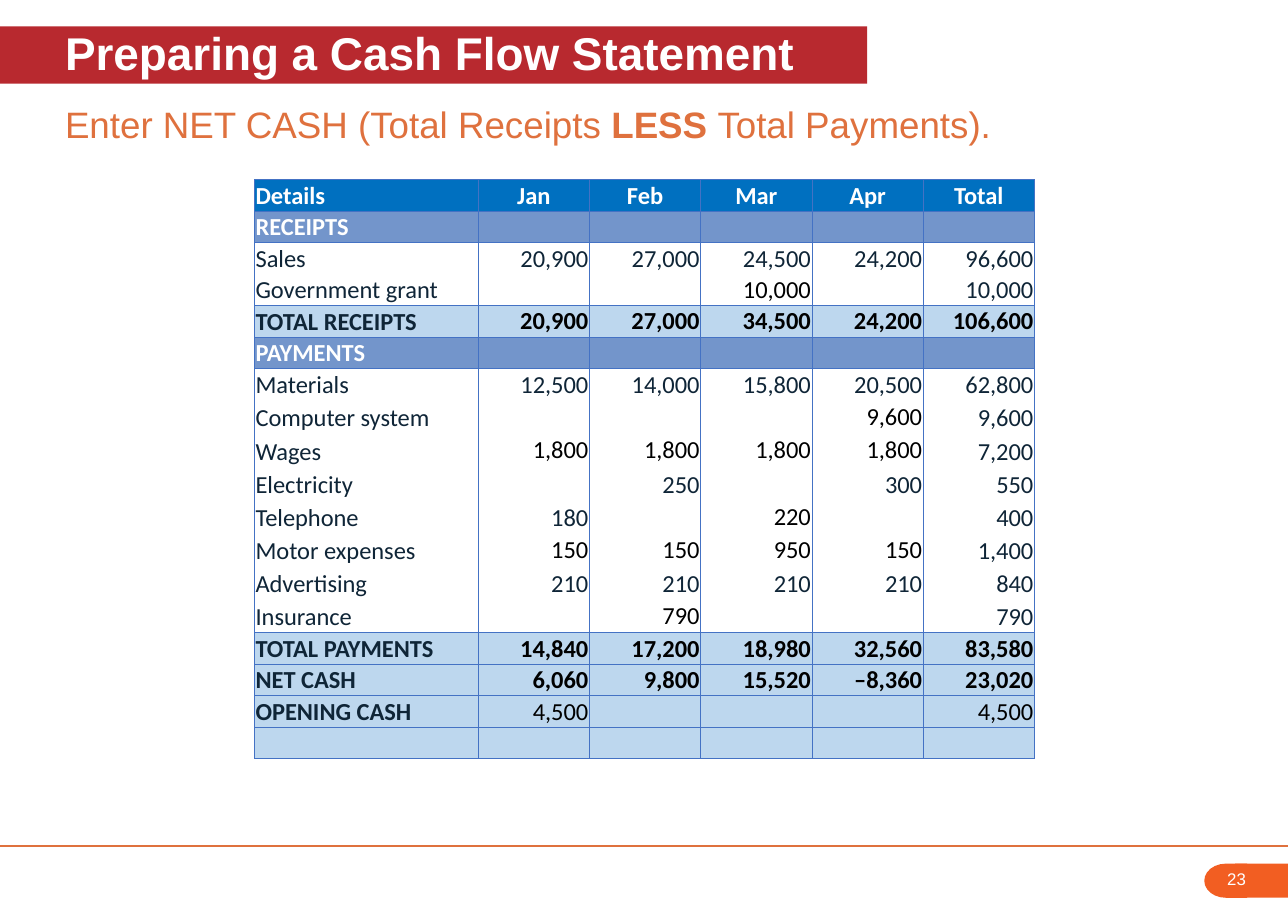
"""Build the cash flow statement slide with its net cash table."""
from lxml.etree import SubElement
from pptx import Presentation
from pptx.dml.color import RGBColor
from pptx.enum.shapes import MSO_CONNECTOR, MSO_SHAPE
from pptx.enum.text import MSO_ANCHOR as ANCHOR, MSO_AUTO_SIZE, PP_ALIGN as ALIGN
from pptx.oxml.ns import qn
from pptx.util import Inches, Pt

TITLE = "Preparing a Cash Flow Statement"
PROMPT = [("Enter NET CASH (Total Receipts ", False), ("LESS ", True),
          ("Total Payments).", False)]
PAGE = "23"

ROWS = [
    ("header", "Details", "Jan", "Feb", "Mar", "Apr", "Total"),
    ("section", "RECEIPTS", "", "", "", "", ""),
    ("receipt", "Sales", "20,900", "27,000", "24,500", "24,200", "96,600"),
    ("receipt", "Government grant", "", "", "10,000", "", "10,000"),
    ("total", "TOTAL RECEIPTS", "20,900", "27,000", "34,500", "24,200", "106,600"),
    ("section", "PAYMENTS", "", "", "", "", ""),
    ("payment", "Materials", "12,500", "14,000", "15,800", "20,500", "62,800"),
    ("payment", "Computer system", "", "", "", "9,600", "9,600"),
    ("payment", "Wages", "1,800", "1,800", "1,800", "1,800", "7,200"),
    ("payment", "Electricity", "", "250", "", "300", "550"),
    ("payment", "Telephone", "180", "", "220", "", "400"),
    ("payment", "Motor expenses", "150", "150", "950", "150", "1,400"),
    ("payment", "Advertising", "210", "210", "210", "210", "840"),
    ("payment", "Insurance", "", "790", "", "", "790"),
    ("total", "TOTAL PAYMENTS", "14,840", "17,200", "18,980", "32,560", "83,580"),
    ("total", "NET CASH", "6,060", "9,800", "15,520", "–8,360", "23,020"),
    ("opening", "OPENING CASH", "4,500", "", "", "", "4,500"),
    ("opening", "", "", "", "", "", ""),
]
BLACK_ENTRIES = {"Government grant": [3], "Computer system": [4], "Wages": [1, 2, 3, 4],
                 "Telephone": [3], "Motor expenses": [1, 2, 3, 4], "Insurance": [2]}
FILLS = {"header": "0070C0", "section": "7395CB", "receipt": "FFFFFF",
         "payment": "FFFFFF", "total": "BDD7EE", "opening": "BDD7EE"}
ITEMS = ("receipt", "payment")
WHITE, BLACK, NAVY, ORANGE, GRID = "FFFFFF", "000000", "0F2537", "DF713E", "4472C4"

SLIDE_W, SLIDE_H = 11.69, 8.27
TABLE_BOX = (2.31, 1.63, 7.08, 5.26)
LABEL_W, MONTH_W, PAYMENT_H = 2.03, 1.01, 0.3


def rgb(value):
    return RGBColor.from_string(value)


def inches(*values):
    return [Inches(v) for v in values]


def apply(target, **values):
    for name, value in values.items():
        setattr(target, name, value)


def add_run(p, text, size, color, bold=False, font="Arial"):
    r = p.add_run()
    r.text = text
    apply(r.font, size=Pt(size), bold=bold, name=font)
    r.font.color.rgb = rgb(color)


def format_line_box(sp):
    tf = sp.text_frame
    apply(tf, word_wrap=True, auto_size=MSO_AUTO_SIZE.NONE, vertical_anchor=ANCHOR.MIDDLE,
          margin_left=Inches(0.59), margin_top=0, margin_right=0, margin_bottom=Inches(0.05))
    tf.paragraphs[0].alignment = ALIGN.LEFT
    return tf.paragraphs[0]


def add_solid(s, kind, box, color):
    sp = s.shapes.add_shape(kind, *inches(*box))
    sp.shadow.inherit = False
    sp.fill.solid()
    sp.fill.fore_color.rgb = rgb(color)
    sp.line.fill.background()
    return sp


def add_footer(s):
    line = s.shapes.add_connector(MSO_CONNECTOR.STRAIGHT, *inches(0, 7.68, SLIDE_W, 7.68))
    line.line.color.rgb = rgb(ORANGE)
    line.line.width = Pt(0.75)
    SubElement(line._element.spPr, qn("a:effectLst"))
    cap = add_solid(s, MSO_SHAPE.FLOWCHART_DELAY, (10.93, 7.84, 0.39, 0.31), "F25E22")
    cap.rotation = 180
    add_solid(s, MSO_SHAPE.RECTANGLE, (11.21, 7.84, 0.48, 0.31), "F25E22")
    number = s.shapes.add_textbox(*inches(11.04, 7.84, 0.56, 0.28))
    number.text_frame.word_wrap = True
    add_run(number.text_frame.paragraphs[0], PAGE, 11, WHITE)


def set_borders(cell, hidden):
    tc_pr = cell._tc.get_or_add_tcPr()
    for side in "LRTB":
        ln = SubElement(tc_pr, qn(f"a:ln{side}"), w=str(Pt(0.5)))
        if side in hidden:
            SubElement(ln, qn("a:noFill"))
        else:
            fill = SubElement(ln, qn("a:solidFill"))
            SubElement(fill, qn("a:srgbClr"), val=GRID)


def text_style(kind, label, col):
    if kind in ("header", "section"):
        return WHITE, True, ANCHOR.MIDDLE
    if kind in ITEMS:
        black = col in BLACK_ENTRIES.get(label, [])
        return (BLACK, False, ANCHOR.TOP) if black else (NAVY, False, ANCHOR.MIDDLE)
    if col == 0:
        return NAVY, True, ANCHOR.MIDDLE
    return BLACK, kind == "total", ANCHOR.TOP


def fill_cell(cell, kind, label, col, text, hidden):
    color, bold, anchor = text_style(kind, label, col)
    apply(cell, margin_left=Inches(0.01), margin_top=Inches(0.01),
          margin_right=Inches(0.01), margin_bottom=0, vertical_anchor=anchor)
    set_borders(cell, hidden)
    cell.fill.solid()
    cell.fill.fore_color.rgb = rgb(FILLS[kind])
    p = cell.text_frame.paragraphs[0]
    if col:
        p.alignment = ALIGN.CENTER if kind == "header" else ALIGN.RIGHT
    if text:
        add_run(p, text, 16, color, bold, "Calibri")
    else:
        SubElement(p._p, qn("a:endParaRPr"), sz="1600")


def add_cash_table(s):
    kinds = [row[0] for row in ROWS]
    payments = kinds.count("payment")
    other_h = (TABLE_BOX[3] - payments * PAYMENT_H) / (len(ROWS) - payments)
    table = s.shapes.add_table(len(ROWS), len(ROWS[0]) - 1, *inches(*TABLE_BOX)).table
    apply(table, first_row=False, horz_banding=False)
    for col, column in enumerate(table.columns):
        column.width = Inches(MONTH_W if col else LABEL_W)
    for i, (kind, *texts) in enumerate(ROWS):
        table.rows[i].height = Inches(PAYMENT_H if kind == "payment" else other_h)
        hidden = ""
        if kind in ITEMS:
            hidden += "T" if kinds[i - 1] == kind else ""
            hidden += "B" if kinds[i + 1] == kind else ""
        for col, text in enumerate(texts):
            fill_cell(table.cell(i, col), kind, texts[0], col, text, hidden)


def main():
    prs = Presentation()
    apply(prs, slide_width=Inches(SLIDE_W), slide_height=Inches(SLIDE_H))
    s = prs.slides.add_slide(prs.slide_layouts[5])
    add_footer(s)

    title = s.shapes.title
    left, top, width, height = inches(0, 0.24, 7.87, 0.52)
    apply(title, left=left, top=top, width=width, height=height)
    title.fill.solid()
    title.fill.fore_color.rgb = rgb("B8292F")
    add_run(format_line_box(title), TITLE, 30, WHITE, True)

    prompt = s.shapes.add_textbox(*inches(0, 0.89, SLIDE_W, 0.51))
    p = format_line_box(prompt)
    for text, bold in PROMPT:
        add_run(p, text, 24, ORANGE, bold)

    add_cash_table(s)
    prs.save("out.pptx")


if __name__ == "__main__":
    main()
